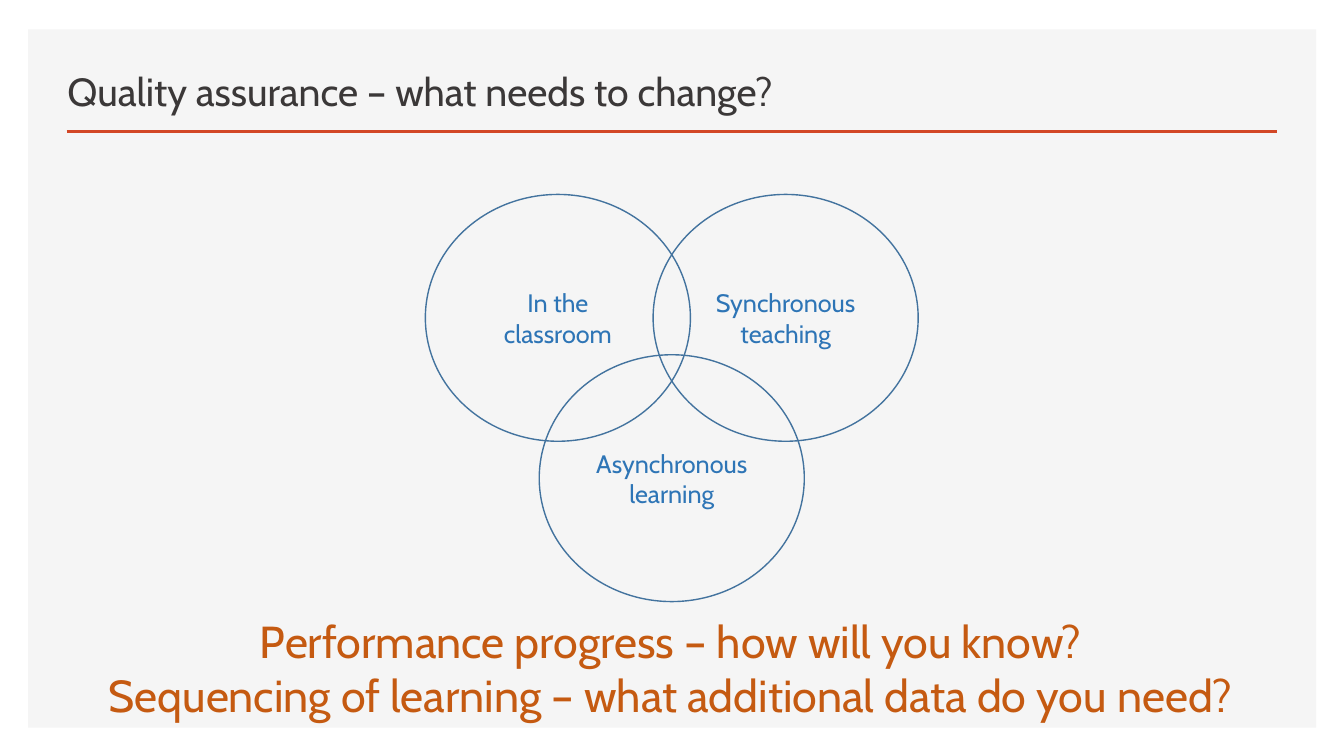
from pptx import Presentation
from pptx.dml.color import RGBColor
from pptx.enum.shapes import MSO_CONNECTOR as Link, MSO_SHAPE as Kind
from pptx.enum.text import MSO_ANCHOR as Anchor, PP_ALIGN as Align
from pptx.oxml.ns import qn
from pptx.util import Cm, Pt
from lxml.etree import SubElement

PALE = RGBColor(0xF5, 0xF5, 0xF5)
RED = RGBColor(0xD2, 0x47, 0x26)
DARK = RGBColor(0x3B, 0x38, 0x38)
RUST = RGBColor(0xC5, 0x5A, 0x11)
STEEL = RGBColor(0x43, 0x73, 0x9E)
BLUE = RGBColor(0x2E, 0x75, 0xB6)
FONT = "Cabin"


def write(shape, lines, size, color, align, anchor):
    frame = shape.text_frame
    frame.word_wrap = True
    frame.vertical_anchor = anchor
    frame.text = "\n".join(lines)
    for para in frame.paragraphs:
        para.alignment = align
        para.font.name = FONT
        para.font.size = Pt(size)
        para.font.color.rgb = color


def add_panel(slide, left, top, width, height):
    panel = slide.shapes.add_shape(
        Kind.RECTANGLE, Cm(left), Cm(top), Cm(width), Cm(height))
    panel.shadow.inherit = False
    panel.fill.solid()
    panel.fill.fore_color.rgb = PALE
    panel.line.fill.background()


def add_header(slide, title, left, top, width, height):
    box = slide.shapes.add_textbox(
        Cm(left), Cm(top), Cm(width), Cm(height - 0.3))
    write(box, [title], 28, DARK, Align.LEFT, Anchor.BOTTOM)
    base = Cm(top + height)
    rule = slide.shapes.add_connector(
        Link.STRAIGHT, Cm(left + 0.23), base, Cm(left + width), base)
    rule.line.color.rgb = RED
    rule.line.width = Pt(2)
    SubElement(rule._element.spPr, qn("a:effectLst"))


def add_venn(slide, labels, left, top, width, height):
    wide, high = 6.68, 6.22
    spots = [(0, 0), (width - wide, 0), ((width - wide) / 2, height - high)]
    group = slide.shapes.add_group_shape()
    for label, (x, y) in zip(labels, spots):
        ring = group.shapes.add_shape(
            Kind.OVAL, Cm(left + x), Cm(top + y), Cm(wide), Cm(high))
        ring.shadow.inherit = False
        ring.fill.background()
        ring.line.color.rgb = STEEL
        ring.line.width = Pt(1)
        frame = ring.text_frame
        frame.margin_left = frame.margin_right = Cm(0.3)
        write(ring, [label], 18, BLUE, Align.CENTER, Anchor.MIDDLE)


def add_footer(slide, lines, left, top, width, height):
    box = slide.shapes.add_textbox(
        Cm(left), Cm(top), Cm(width), Cm(height))
    write(box, lines, 32, RUST, Align.CENTER, Anchor.TOP)


def main():
    deck = Presentation()
    deck.slide_width, deck.slide_height = Cm(33.87), Cm(19.05)
    slide = deck.slides.add_slide(deck.slide_layouts[6])
    add_panel(slide, 0.71, 0.74, 32.46, 17.6)
    add_header(slide, "Quality assurance – what needs to change?",
               1.45, 1.24, 30.73, 2.08)
    add_footer(slide, ["Performance progress – how will you know?",
                       "Sequencing of learning – what additional data do you need?"],
               1.22, 15.34, 31.39, 3)
    add_venn(slide, ["In the classroom", "Synchronous teaching",
                     "Asynchronous learning"], 10.72, 4.9, 12.42, 10.26)
    deck.save("out.pptx")


if __name__ == "__main__":
    main()
